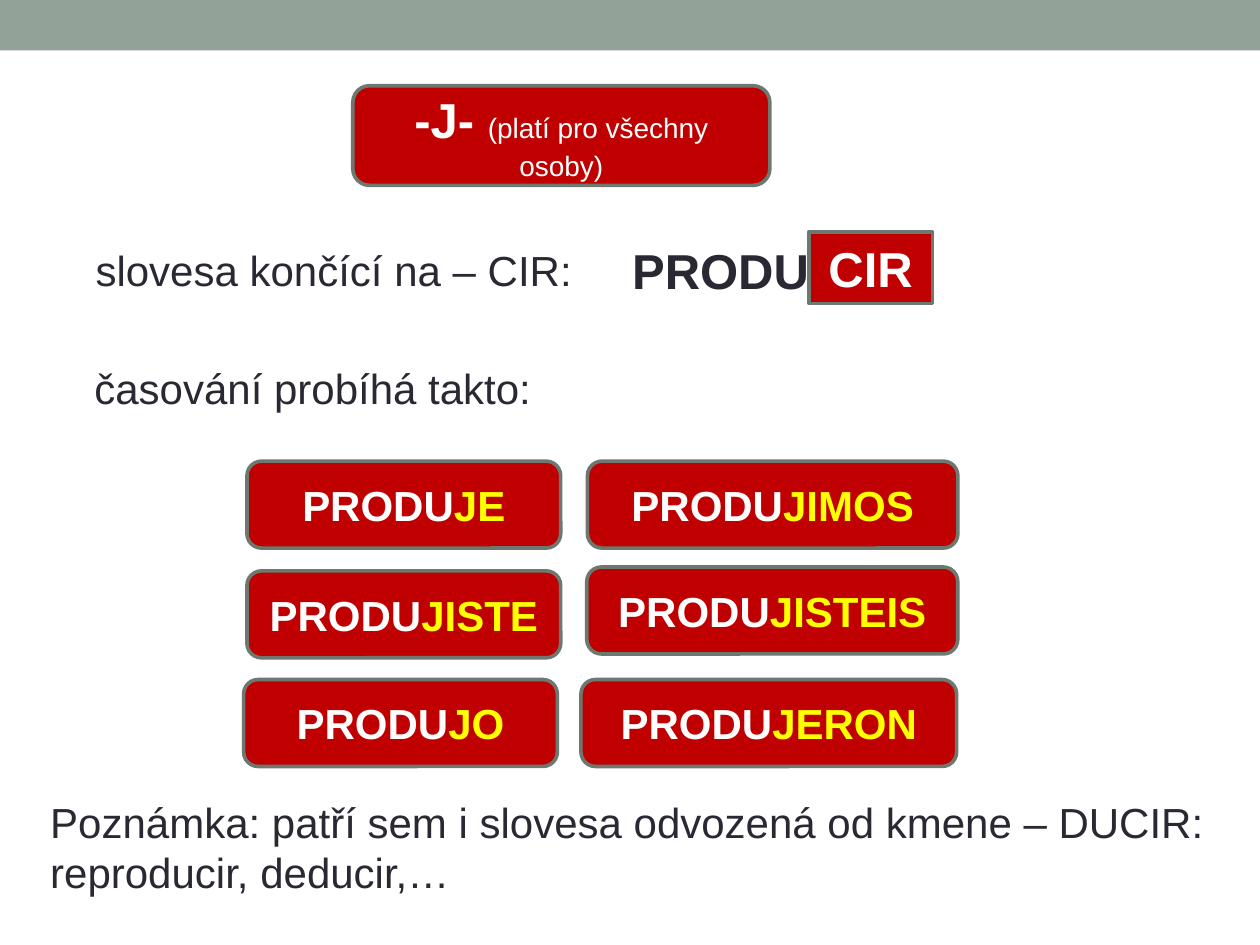
"""Build a slide on the Spanish preterite of verbs ending in -CIR."""
import pptx
import pptx.util
import pptx.dml.color
import pptx.enum.shapes
import pptx.enum.text

Pt = pptx.util.Pt
SHAPES = pptx.enum.shapes.MSO_SHAPE
TEXT = pptx.enum.text

COLORS = {
    "band": "93A299", "red": "C00000", "border": "6D7871",
    "dark": "292934", "white": "FFFFFF", "yellow": "FFFF00",
}
STEM = "PRODU"
RULE = [("-J- ", 28, True, "white"), ("(platí pro všechny osoby)", 16, False, "white")]
ENDING = [("CIR", 28, True, "white")]
LABELS = [
    ("slovesa končící na – CIR:", 24, False, (47.5, 136, 289.5, 36), False),
    (STEM, 28, True, (354.2, 133.9, 116.6, 41), False),
    ("časování probíhá takto:", 24, False, (46.8, 203.8, 272.9, 36), False),
    ("Poznámka: patří sem i slovesa odvozená od kmene – DUCIR: reproducir, deducir,…",
     24, False, (21.6, 451.4, 673.2, 65.5), True),
]
FORM_HEIGHT = 49.7
FORMS = [
    ("JE", 141.1, 263.5, 179.3), ("JIMOS", 335.7, 263.5, 211.7),
    ("JISTE", 141.1, 326.2, 179.3), ("JISTEIS", 335.3, 324, 212),
    ("JO", 139.2, 388.3, 179.3), ("JERON", 332, 388.3, 214.7),
]


def rgb(name):
    return pptx.dml.color.RGBColor.from_string(COLORS[name])


def write_runs(paragraph, runs):
    for text, size, bold, color in runs:
        run = paragraph.add_run()
        run.text = text
        run.font.name = "Arial"
        run.font.size = Pt(size)
        run.font.bold = bold
        run.font.color.rgb = rgb(color)


def add_block(slide, kind, box, fill):
    block = slide.shapes.add_shape(kind, *map(Pt, box))
    block.shadow.inherit = False
    block.fill.solid()
    block.fill.fore_color.rgb = rgb(fill)
    block.line.fill.background()
    return block


def add_card(slide, kind, box, runs):
    card = add_block(slide, kind, box, "red")
    card.line.color.rgb = rgb("border")
    card.line.width = Pt(2.08)
    frame = card.text_frame
    frame.word_wrap = True
    frame.vertical_anchor = TEXT.MSO_ANCHOR.MIDDLE
    frame.paragraphs[0].alignment = TEXT.PP_ALIGN.CENTER
    write_runs(frame.paragraphs[0], runs)


def add_label(slide, text, size, bold, box, wrap):
    frame = slide.shapes.add_textbox(*map(Pt, box)).text_frame
    frame.word_wrap = wrap
    frame.auto_size = TEXT.MSO_AUTO_SIZE.SHAPE_TO_FIT_TEXT
    write_runs(frame.paragraphs[0], [(text, size, bold, "dark")])


def main():
    deck = pptx.Presentation()
    deck.slide_width, deck.slide_height = Pt(720), Pt(540)
    slide = deck.slides.add_slide(deck.slide_layouts[6])

    add_block(slide, SHAPES.RECTANGLE, (0, 0, 720, 28.8), "band")
    add_card(slide, SHAPES.ROUNDED_RECTANGLE, (201.6, 49, 238.3, 56.9), RULE)
    for label in LABELS:
        add_label(slide, *label)
    add_card(slide, SHAPES.RECTANGLE, (462.2, 132.5, 70.6, 41), ENDING)
    for ending, left, top, width in FORMS:
        runs = [(STEM, 24, True, "white"), (ending, 24, True, "yellow")]
        add_card(slide, SHAPES.ROUNDED_RECTANGLE, (left, top, width, FORM_HEIGHT), runs)

    deck.save("out.pptx")


if __name__ == "__main__":
    main()
